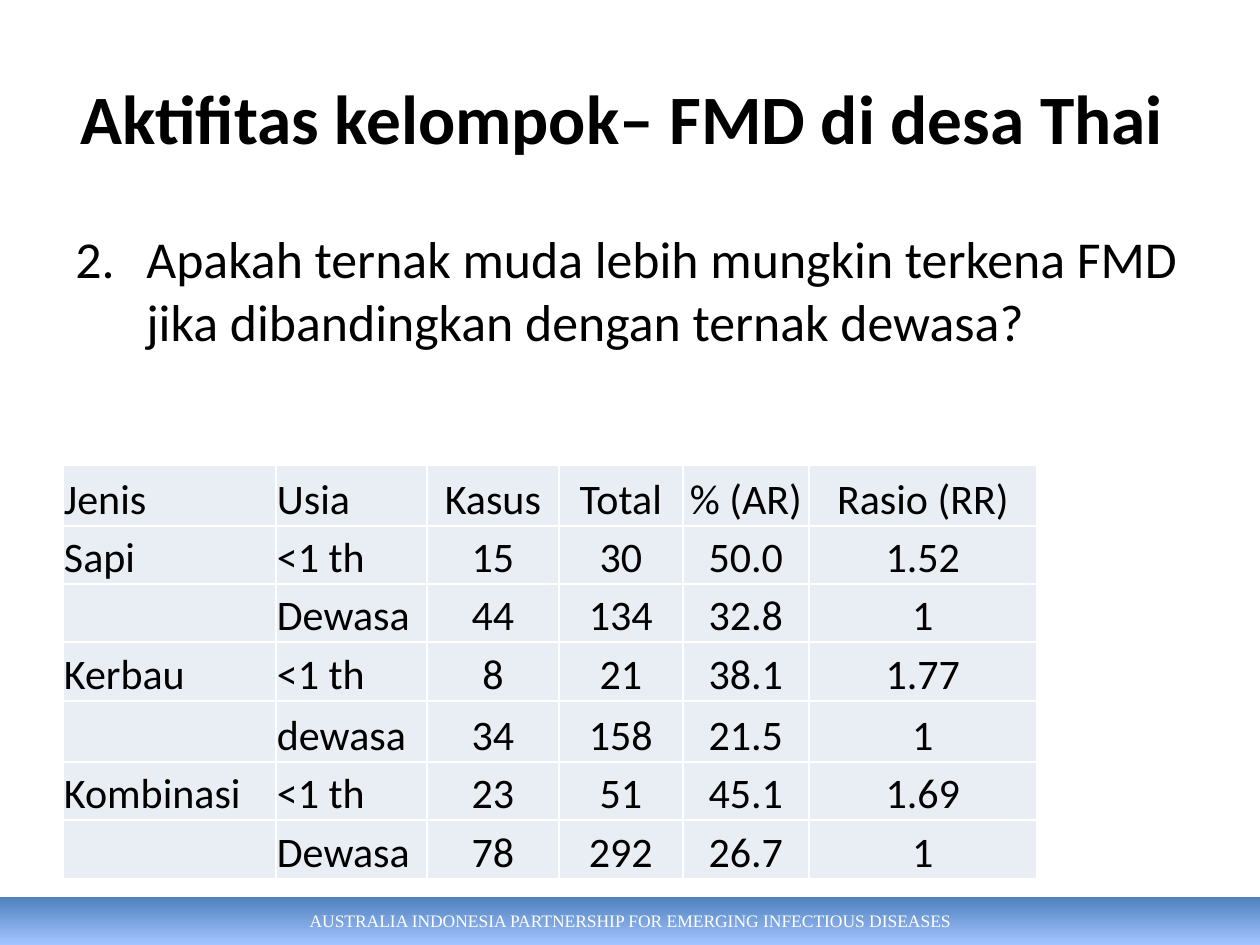
from lxml.etree import SubElement
from pptx import Presentation
from pptx.dml.color import RGBColor
from pptx.enum.shapes import MSO_SHAPE as Shape
from pptx.enum.text import MSO_ANCHOR as Anchor, MSO_AUTO_SIZE as AutoSize, PP_ALIGN as Align
from pptx.oxml.ns import qn
from pptx.util import Emu, Pt


def px(length):
    return Emu(round(length * 914400 / 126))


def add_span(para, text, size, color="000000", font="Calibri", bold=False):
    span = para.add_run()
    span.text = text
    span.font.name = font
    span.font.size = Pt(size)
    span.font.bold = bold
    span.font.color.rgb = RGBColor.from_string(color)


deck = Presentation()
deck.slide_width, deck.slide_height = px(1260), px(945)
page = deck.slides.add_slide(deck.slide_layouts[5])

footer = page.shapes.add_shape(Shape.RECTANGLE, px(0), px(897), px(1260), px(48))
footer.shadow.inherit = False
footer.line.fill.background()
footer.fill.gradient()
footer.fill.gradient_angle = 270
for stop, color in zip(footer.fill.gradient_stops, ["4F81BD", "A4C4FF"]):
    stop.color.rgb = RGBColor.from_string(color)
footer.text_frame.vertical_anchor = Anchor.MIDDLE
para = footer.text_frame.paragraphs[0]
para.alignment = Align.CENTER
add_span(para, "AUSTRALIA INDONESIA PARTNERSHIP FOR EMERGING INFECTIOUS DISEASES",
         10, "FFFFFF", "Times New Roman")

title = page.shapes.title
title.left, title.top, title.width, title.height = px(63), px(38), px(1134), px(158)
title.text_frame.auto_size = AutoSize.NONE
title.text_frame.vertical_anchor = Anchor.MIDDLE
para = title.text_frame.paragraphs[0]
para.alignment = Align.CENTER
add_span(para, "Aktifitas kelompok– FMD di desa Thai ", 39.6, bold=True)

question = page.shapes.add_textbox(px(63), px(221), px(1134), px(173))
question.text_frame.word_wrap = True
para = question.text_frame.paragraphs[0]
properties = para._p.get_or_add_pPr()
properties.set("marL", str(px(71)))
properties.set("indent", str(-px(71)))
SubElement(properties, qn("a:buFont"), typeface="+mj-lt")
SubElement(properties, qn("a:buAutoNum"), type="arabicPeriod", startAt="2")
add_span(para, "Apakah ternak muda lebih mungkin terkena FMD jika dibandingkan dengan ternak dewasa?", 29.6)

rows = [
    ["Jenis", "Usia", "Kasus", "Total", "% (AR)", "Rasio (RR)"],
    ["Sapi", "<1 th", "15", "30", "50.0", "1.52"],
    ["", "Dewasa", "44", "134", "32.8", "1"],
    ["Kerbau", "<1 th", "8", "21", "38.1", "1.77"],
    ["", "dewasa", "34", "158", "21.5", "1"],
    ["Kombinasi", "<1 th", "23", "51", "45.1", "1.69"],
    ["", "Dewasa", "78", "292", "26.7", "1"],
]
widths = [213, 151, 132, 124, 126, 228]
heights = [61, 58, 58, 59, 61, 58, 59]
table = page.shapes.add_table(len(rows), len(widths), px(63), px(465),
                              px(sum(widths)), px(sum(heights))).table
table.first_row = False
table.horz_banding = False
for column, width in zip(table.columns, widths):
    column.width = px(width)
for r, (texts, height) in enumerate(zip(rows, heights)):
    table.rows[r].height = px(height)
    for c, text in enumerate(texts):
        cell = table.cell(r, c)
        cell.margin_left = cell.margin_right = cell.margin_top = px(1)
        cell.margin_bottom = 0
        cell.vertical_anchor = Anchor.BOTTOM
        for side in ["a:lnL", "a:lnR", "a:lnT", "a:lnB"]:
            border = SubElement(cell._tc.get_or_add_tcPr(), qn(side), w=str(Pt(1)))
            SubElement(SubElement(border, qn("a:solidFill")), qn("a:srgbClr"), val="FFFFFF")
        cell.fill.solid()
        cell.fill.fore_color.rgb = RGBColor.from_string("E9EDF4")
        if text:
            para = cell.text_frame.paragraphs[0]
            para.alignment = Align.LEFT if c < 2 else Align.CENTER
            add_span(para, text, 24)

deck.save("out.pptx")
